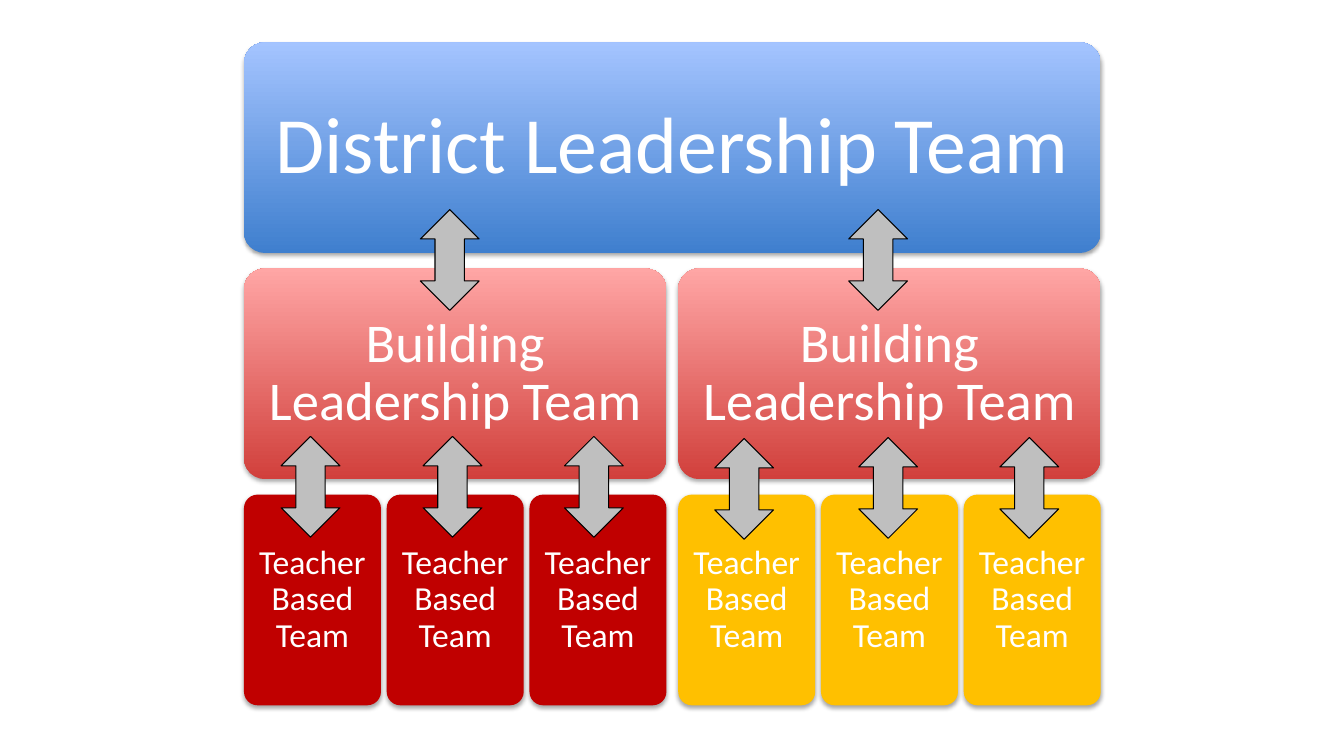
import dataclasses

import lxml.etree
import pptx
import pptx.dml.color
import pptx.enum.shapes
import pptx.enum.text
import pptx.oxml.ns
import pptx.util

Pt = pptx.util.Pt
RGB = pptx.dml.color.RGBColor.from_string
SHAPES = pptx.enum.shapes.MSO_SHAPE
qn = pptx.oxml.ns.qn


@dataclasses.dataclass(frozen=True)
class Theme:
    """Colours, font and type sizes of the slide."""

    font: str = "Calibri"
    text: str = "FFFFFF"
    district: tuple = ("3F7FCE", "A4C4FF")
    building: tuple = ("D1403C", "FFA6A5")
    teachers: tuple = (("C00000",), ("FFC000",))
    arrow: str = "BFBFBF"
    outline: str = "000000"
    shadow: str = "000000"
    district_size: float = 57
    building_size: float = 39
    teacher_size: float = 24


@dataclasses.dataclass(frozen=True)
class Box:
    """A rectangle in points."""

    left: float
    top: float
    width: float
    height: float

    def columns(self, count, gap):
        """Split the box into equal columns."""
        width = (self.width - gap * (count - 1)) / count
        return [Box(self.left + i * (width + gap), self.top, width, self.height)
                for i in range(count)]

    def rows(self, count, gap):
        """Split the box into equal rows."""
        height = (self.height - gap * (count - 1)) / count
        return [Box(self.left, self.top + i * (height + gap), self.width, height)
                for i in range(count)]


THEME = Theme()
DIAGRAM = Box(174.24, 30.24, 612, 473.6)
ROW_GAP = 11
BUILDING_GAP = 8.4
TEACHER_GAP = 4.1
ARROW_WIDTH, ARROW_HEIGHT = 42, 72
DISTRICT_ARROWS = [(126, 119.5), (432, 119.5)]
TEACHER_ARROWS = [(26.6, 281.5), (128, 281.5), (229, 281.5),
                  (336.3, 283), (439.2, 282.3), (540, 282.3)]


def set_values(target, values):
    """Set each attribute of the target from a dict."""
    for name, value in values.items():
        setattr(target, name, value)


def add_preset(slide, kind, box):
    """Add a preset shape in a box, without a shadow."""
    shape = slide.shapes.add_shape(
        kind, Pt(box.left), Pt(box.top), Pt(box.width), Pt(box.height))
    shape.shadow.inherit = False
    return shape


def fill_shape(shape, colors):
    """Fill with one colour, or with a gradient that rises from the first."""
    if len(colors) == 1:
        shape.fill.solid()
        shape.fill.fore_color.rgb = RGB(colors[0])
        return
    shape.fill.gradient()
    shape.fill.gradient_angle = 90
    for stop, color in zip(shape.fill.gradient_stops, colors):
        stop.color.rgb = RGB(color)


def add_soft_shadow(shape):
    """Give the shape a soft shadow below it."""
    effects = shape.element.spPr.find(qn("a:effectLst"))
    shadow = lxml.etree.SubElement(
        effects, qn("a:outerShdw"), blurRad=str(Pt(3.1)), dist=str(Pt(1.8)),
        dir="5400000", rotWithShape="0")
    color = lxml.etree.SubElement(shadow, qn("a:srgbClr"), val=THEME.shadow)
    lxml.etree.SubElement(color, qn("a:alpha"), val="35000")


def add_team(slide, box, text, colors, size, inset):
    """Draw one team as a rounded card with centred text."""
    shape = add_preset(slide, SHAPES.ROUNDED_RECTANGLE, box)
    shape.adjustments[0] = 0.1
    fill_shape(shape, colors)
    shape.line.fill.background()
    add_soft_shadow(shape)
    frame = shape.text_frame
    sides = ("left", "top", "right", "bottom")
    set_values(frame, {f"margin_{side}": Pt(inset) for side in sides})
    set_values(frame, {"word_wrap": True,
                       "vertical_anchor": pptx.enum.text.MSO_ANCHOR.MIDDLE})
    paragraph = frame.paragraphs[0]
    set_values(paragraph, {"alignment": pptx.enum.text.PP_ALIGN.CENTER,
                           "line_spacing": 0.9})
    run = paragraph.add_run()
    run.text = text
    set_values(run.font, {"name": THEME.font, "size": Pt(size)})
    run.font.color.rgb = RGB(THEME.text)


def add_arrows(slide, box, offsets):
    """Draw the two-way arrows at offsets from the corner of the box."""
    for left, top in offsets:
        arrow = add_preset(slide, SHAPES.UP_DOWN_ARROW, Box(
            box.left + left, box.top + top, ARROW_WIDTH, ARROW_HEIGHT))
        fill_shape(arrow, (THEME.arrow,))
        arrow.line.color.rgb = RGB(THEME.outline)
        arrow.line.width = Pt(0.75)


def add_hierarchy(slide, box):
    """Draw the district, its buildings and their teacher teams."""
    district, buildings, teachers = box.rows(3, ROW_GAP)
    add_team(slide, district, "District Leadership Team",
             THEME.district, THEME.district_size, 17.1)
    branches = zip(buildings.columns(2, BUILDING_GAP),
                   teachers.columns(2, BUILDING_GAP), THEME.teachers)
    for building, group, colors in branches:
        add_team(slide, building, "Building Leadership Team",
                 THEME.building, THEME.building_size, 11.7)
        for teacher in group.columns(3, TEACHER_GAP):
            add_team(slide, teacher, "Teacher Based Team",
                     colors, THEME.teacher_size, 7.2)
    add_arrows(slide, box, DISTRICT_ARROWS + TEACHER_ARROWS)


def main():
    """Build and save the presentation."""
    presentation = pptx.Presentation()
    set_values(presentation, {"slide_width": Pt(960), "slide_height": Pt(540)})
    slide = presentation.slides.add_slide(presentation.slide_layouts[6])
    add_hierarchy(slide, DIAGRAM)
    presentation.save("out.pptx")


if __name__ == "__main__":
    main()
